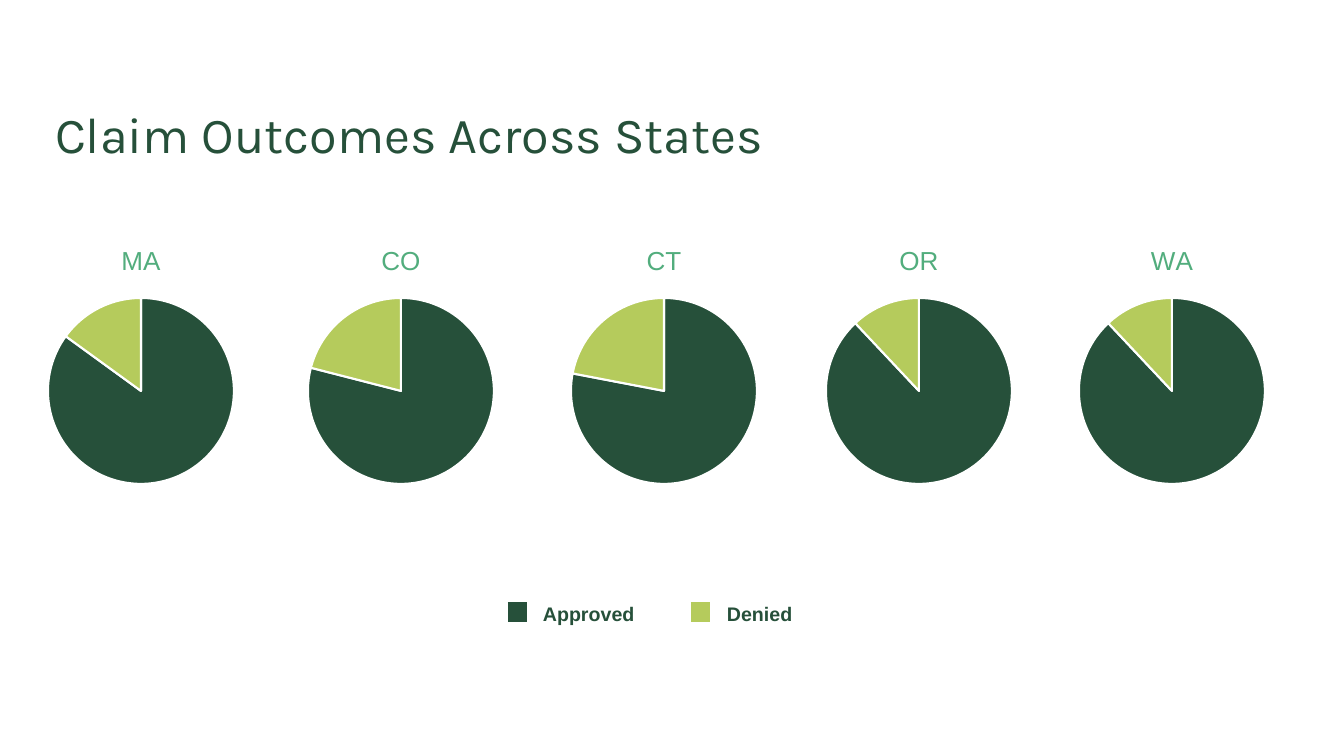
from lxml.etree import SubElement
from pptx import Presentation
from pptx.chart.data import CategoryChartData
from pptx.dml.color import RGBColor
from pptx.enum.chart import XL_CHART_TYPE
from pptx.enum.shapes import MSO_CONNECTOR
from pptx.enum.text import MSO_ANCHOR, PP_ALIGN
from pptx.oxml import parse_xml
from pptx.oxml.ns import nsdecls, qn
from pptx.util import Pt

PX = 914400 / 100.8
DARK_GREEN, LIME, MINT = "26503A", "B5CB5C", "52AD7D"
OUTCOMES = [("Approved", DARK_GREEN), ("Denied", LIME)]


def box(*lengths):
    """Turn px lengths into EMU."""
    return [round(length * PX) for length in lengths]


def style(font, name, size, color, bold=False):
    font.name, font.size, font.bold = name, Pt(size), bold
    font.color.rgb = RGBColor.from_string(color)


presentation = Presentation()
presentation.slide_width, presentation.slide_height = box(1344, 756)
slide = presentation.slides.add_slide(presentation.slide_layouts[5])

title = slide.shapes.title
title.left, title.top, title.width, title.height = box(45, 81, 1159, 113)
title.text_frame.vertical_anchor = MSO_ANCHOR.MIDDLE
paragraph = title.text_frame.paragraphs[0]
paragraph.alignment = PP_ALIGN.LEFT
paragraph.line_spacing = 0.9
run = paragraph.add_run()
run.text = "Claim Outcomes Across States"
style(run.font, "Karla", 36, DARK_GREEN)

# One pie per state: name, centre of the pie, approved share in percent
CHART_WIDTH, CHART_TOP, CHART_HEIGHT = 264, 228, 270
PIE_TOP, PIE_SIZE = 298, 186
states = [("MA", 141, 85), ("CO", 401, 79), ("CT", 664, 78), ("OR", 919, 88), ("WA", 1172, 88)]
pie_layout = {
    "x": (CHART_WIDTH - PIE_SIZE) / 2 / CHART_WIDTH,
    "y": (PIE_TOP - CHART_TOP) / CHART_HEIGHT,
    "w": PIE_SIZE / CHART_WIDTH,
    "h": PIE_SIZE / CHART_HEIGHT,
}
layout_xml = "".join(f'<c:{key} val="{value:.4f}"/>' for key, value in pie_layout.items())

for state, center, approved in states:
    chart_data = CategoryChartData()
    chart_data.categories = [outcome for outcome, _ in OUTCOMES]
    chart_data.add_series(state, (approved, 100 - approved))
    chart = slide.shapes.add_chart(
        XL_CHART_TYPE.PIE,
        *box(center - CHART_WIDTH / 2, CHART_TOP, CHART_WIDTH, CHART_HEIGHT),
        chart_data,
    ).chart
    chart.has_legend = False
    style(chart.font, "Arial", 10, DARK_GREEN)
    run = chart.chart_title.text_frame.paragraphs[0].add_run()
    run.text = state
    style(run.font, "Arial", 18.6, MINT)

    plot = chart.plots[0]
    plot.vary_by_categories = True
    for index, (_, color) in enumerate(OUTCOMES):
        slice_format = plot.series[0].points[index].format
        slice_format.fill.solid()
        slice_format.fill.fore_color.rgb = RGBColor.from_string(color)
        slice_format.line.color.rgb = RGBColor.from_string("FFFFFF")
        slice_format.line.width = Pt(1.5)

    plot_area = chart._chartSpace.chart.plotArea
    for layout in plot_area.findall("{*}layout"):
        plot_area.remove(layout)
    plot_area.insert(0, parse_xml(
        f'<c:layout {nsdecls("c")}><c:manualLayout><c:layoutTarget val="inner"/>'
        f'<c:xMode val="edge"/><c:yMode val="edge"/>{layout_xml}</c:manualLayout></c:layout>'
    ))

# Shared legend: a short thick line and a label for each outcome
for index, (outcome, color) in enumerate(OUTCOMES):
    left = 508 + 183 * index
    swatch = slide.shapes.add_connector(MSO_CONNECTOR.STRAIGHT, *box(left, 612, left + 19, 612))
    swatch.line.color.rgb = RGBColor.from_string(color)
    swatch.line.width = Pt(14)
    SubElement(swatch._element.spPr, qn("a:effectLst"))
    label = slide.shapes.add_textbox(*box(left + 25 + index, 597, 130, 34))
    label.text_frame.word_wrap = True
    run = label.text_frame.paragraphs[0].add_run()
    run.text = outcome
    style(run.font, "Arial", 14, DARK_GREEN, bold=True)

presentation.save("out.pptx")
